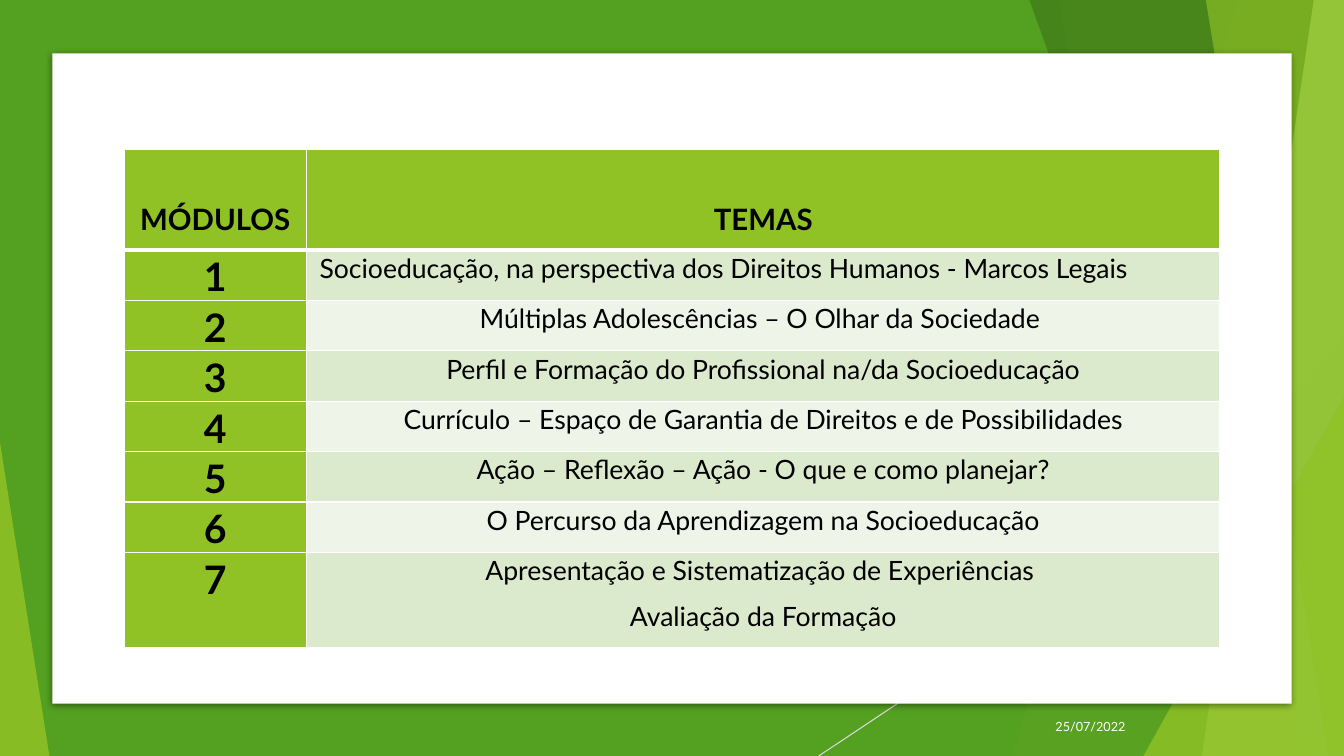
from lxml.etree import SubElement
from pptx import Presentation
from pptx.dml.color import RGBColor
from pptx.enum.shapes import MSO_CONNECTOR, MSO_SHAPE
from pptx.enum.text import MSO_ANCHOR, PP_ALIGN
from pptx.oxml.ns import qn
from pptx.util import Inches, Pt

WIDE, HIGH = 13.33, 7.5
GREEN, LIME, WHITE, BLACK = "54A021", "90C226", "FFFFFF", "000000"
BANDS = ["DBE9CD", "EEF4E8"]
HEADS = ["MÓDULOS", "TEMAS"]
THEMES = [
    ["Socioeducação, na perspectiva dos Direitos Humanos - Marcos Legais"],
    ["Múltiplas Adolescências – O Olhar da Sociedade "],
    ["Perfil e Formação do Profissional na/da Socioeducação"],
    ["Currículo – Espaço de Garantia de Direitos e de Possibilidades"],
    ["Ação – Reflexão – Ação - O que e como planejar?"],
    ["O Percurso da Aprendizagem na Socioeducação"],
    ["Apresentação e Sistematização de Experiências ", "Avaliação da Formação"],
]
DATE = "25/07/2022"
COLS = [1.81, 9.06]
ROWS = [1] + [0.5] * 6 + [0.94]
# fmt: off
FACETS = [
    ("band", 12.28, 10.04, LIME, 30),
    ("band", 10.5, 11.83, LIME, 20),
    ("peak", 9.77, 3.33, 3.56, 1, GREEN, 72),
    ("band", 10.21, 12.91, "3F7819", 70),
    ("band", 13.03, 11.92, "C0E474", 70),
    ("band", 11.96, 13.18, LIME, 65),
    ("peak", 11.34, 3.93, 1.99, 1, LIME, 80),
    ("peak", 0, 4.39, 0.49, 0, LIME, 85),
]
# fmt: on

deck = Presentation()
deck.slide_width, deck.slide_height = Inches(WIDE), Inches(HIGH)
slide = deck.slides.add_slide(deck.slide_layouts[6])
shapes = slide.shapes


def tint(hue):
    return RGBColor.from_string(hue)


def paint(shape, hue, alpha=100):
    shape.shadow.inherit = False
    shape.fill.solid()
    shape.fill.fore_color.rgb = tint(hue)
    shape.line.fill.background()
    if alpha < 100:
        clr = shape.fill._xPr.find(qn("a:solidFill"))[0]
        SubElement(clr, qn("a:alpha"), val=str(alpha * 1000))
    return shape


def block(kind, x, y, w, h):
    return shapes.add_shape(kind, *map(Inches, (x, y, w, h)))


def band(top, foot, hue, alpha):
    pts = [(top, 0), (WIDE, 0), (WIDE, HIGH), (foot, HIGH)]
    pts = [(Inches(x), Inches(y)) for x, y in pts]
    path = shapes.build_freeform(*pts[0])
    path.add_line_segments(pts[1:], close=True)
    paint(path.convert_to_shape(), hue, alpha)


def peak(x, y, w, apex, hue, alpha):
    tri = block(MSO_SHAPE.ISOSCELES_TRIANGLE, x, y, w, HIGH - y)
    tri.adjustments[0] = apex
    paint(tri, hue, alpha)


def write(frame, lines, size, hue, bold=False, **form):
    for i, line in enumerate(lines):
        para = frame.add_paragraph() if i else frame.paragraphs[0]
        for key, val in form.items():
            setattr(para, key, val)
        run = para.add_run()
        run.text = line
        font = {"name": "Lato", "size": Pt(size), "bold": bold}
        for key, val in font.items():
            setattr(run.font, key, val)
        run.font.color.rgb = tint(hue)


def edge(cell, row):
    props = cell._tc.get_or_add_tcPr()
    thick = {"L": 1, "R": 1, "T": 3 if row == 1 else 1, "B": 1 if row else 3}
    for side, width in thick.items():
        line = SubElement(props, qn("a:ln" + side), w=str(Pt(width)))
        fill = SubElement(line, qn("a:solidFill"))
        SubElement(fill, qn("a:srgbClr"), val=WHITE)


def fill(cell, row, lines, hue, size, bold, align):
    edge(cell, row)
    cell.fill.solid()
    cell.fill.fore_color.rgb = tint(hue)
    pads = {"left": 0.13, "right": 0.13, "top": 0 if row else 0.49, "bottom": 0}
    for side, pad in pads.items():
        setattr(cell, "margin_" + side, Inches(pad))
    write(cell.text_frame, lines, size, BLACK, bold,
          alignment=align, line_spacing=1.07, space_after=Pt(8))


paint(block(MSO_SHAPE.RECTANGLE, 0, 0, WIDE, HIGH), GREEN)
ray = shapes.add_connector(
    MSO_CONNECTOR.STRAIGHT, *map(Inches, (WIDE, 4.03, 8.12, HIGH)))
ray.line.color.rgb = tint("D9D9D9")
ray.line.width = Pt(0.75)
SubElement(ray._element.spPr, qn("a:effectLst"))
for kind, *args in FACETS:
    {"band": band, "peak": peak}[kind](*args)

panel = paint(block(MSO_SHAPE.RECTANGLE, 0.52, 0.53, 12.29, 6.45), WHITE)
glow = SubElement(
    panel._element.spPr.find(qn("a:effectLst")), qn("a:outerShdw"),
    blurRad=str(Pt(5)), dist=str(Pt(1.4)), dir="5400000", rotWithShape="0")
shade = SubElement(glow, qn("a:srgbClr"), val=BLACK)
SubElement(shade, qn("a:alpha"), val="43000")

date = shapes.add_textbox(*map(Inches, (10.26, 7.01, 1, 0.4))).text_frame
date.word_wrap = True
date.vertical_anchor = MSO_ANCHOR.MIDDLE
write(date, [DATE], 9, WHITE, alignment=PP_ALIGN.RIGHT, space_after=Pt(6))

table = shapes.add_table(
    len(ROWS), len(COLS),
    *map(Inches, (1.23, 1.48, sum(COLS), sum(ROWS)))).table
for col, width in zip(table.columns, COLS):
    col.width = Inches(width)
for row, height in zip(table.rows, ROWS):
    row.height = Inches(height)
for c, head in enumerate(HEADS):
    fill(table.cell(0, c), 0, [head], LIME, 21, True, PP_ALIGN.CENTER)
for r, theme in enumerate(THEMES, 1):
    align = PP_ALIGN.LEFT if r == 1 else PP_ALIGN.CENTER
    fill(table.cell(r, 0), r, [str(r)], LIME, 28, True, PP_ALIGN.CENTER)
    fill(table.cell(r, 1), r, theme, BANDS[(r - 1) % 2], 19, False, align)

deck.save("out.pptx")
